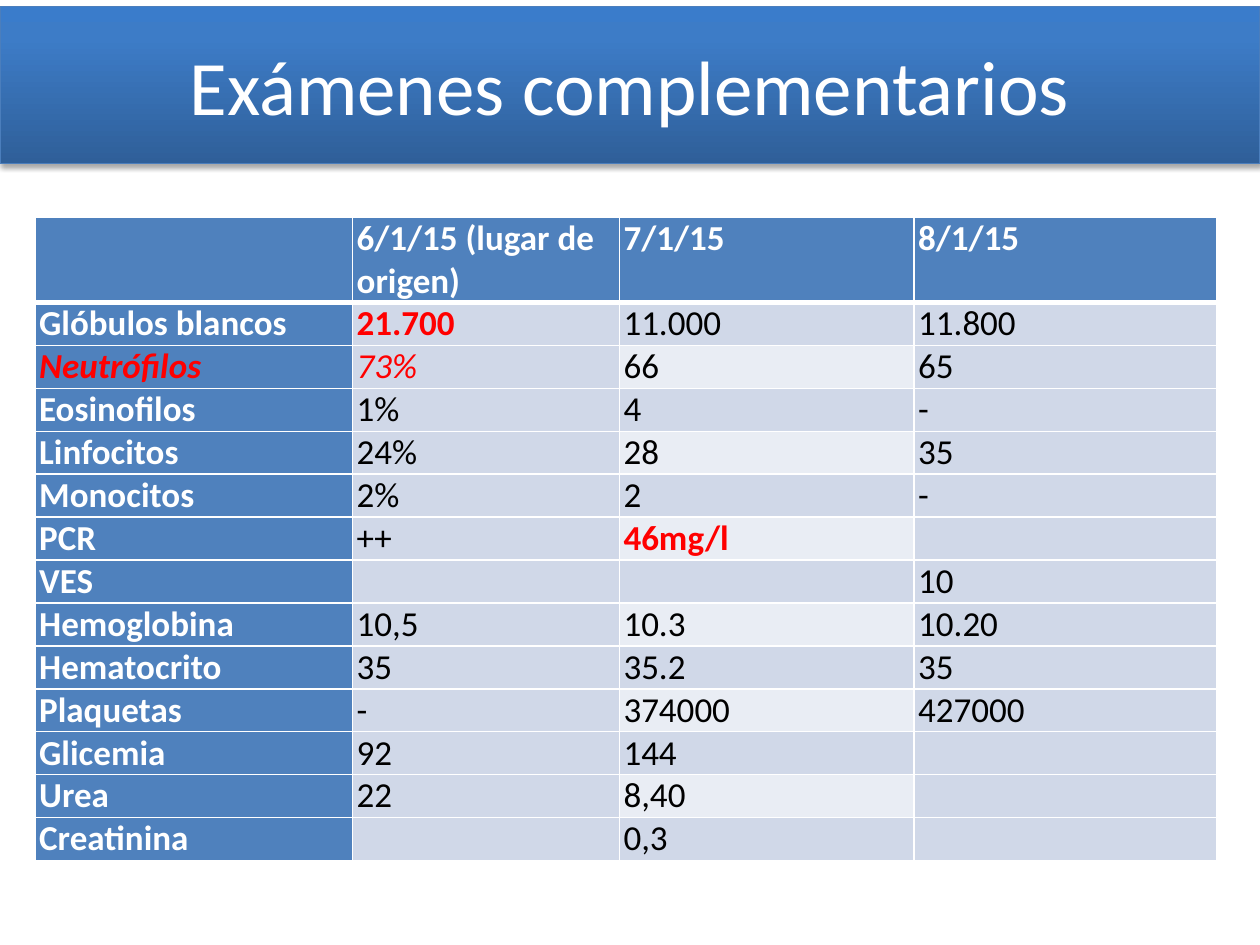
import pptx
import pptx.util
import pptx.dml.color
import pptx.enum.text
import pptx.oxml
import pptx.oxml.ns

Cm, Pt = pptx.util.Cm, pptx.util.Pt

TITLE = "Exámenes complementarios"
ROWS = [
    ("", "6/1/15 (lugar de origen)", "7/1/15", "8/1/15"),
    ("Glóbulos blancos", "21.700", "11.000", "11.800"),
    ("Neutrófilos", "73%", "66", "65"),
    ("Eosinofilos", "1%", "4", "-"),
    ("Linfocitos", "24%", "28", "35"),
    ("Monocitos", "2%", "2", "-"),
    ("PCR", "++", "46mg/l", ""),
    ("VES", "", "", "10"),
    ("Hemoglobina", "10,5", "10.3", "10.20"),
    ("Hematocrito", "35", "35.2", "35"),
    ("Plaquetas", "-", "374000", "427000"),
    ("Glicemia", "92", "144", ""),
    ("Urea", "22", "8,40", ""),
    ("Creatinina", "", "0,3", ""),
]
WIDTHS = [6.4, 5.38, 5.94, 6.1]
HEAD, ROW = 1.73, 0.86
BLUE, BAND, PALE = "4F81BD", "D0D8E8", "E9EDF4"
WHITE, BLACK, RED = "FFFFFF", "000000", "FF0000"
MARKS = {
    (1, 1): {"bold": True},
    (2, 0): {"bold": True, "italic": True},
    (2, 1): {"italic": True},
    (6, 2): {"bold": True},
}
STOPS = [(0, "2F5F99"), (80, "3D7CC7"), (100, "3A7CCB")]
NS = pptx.oxml.ns.nsdecls("a")


def paint(target, code):
    target.rgb = pptx.dml.color.RGBColor.from_string(code)


def fill(shape, code):
    shape.fill.solid()
    paint(shape.fill.fore_color, code)


def put(item, values):
    for name, value in values.items():
        setattr(item, name, value)


def add(parent, text):
    parent.append(pptx.oxml.parse_xml(text))


def write(frame, text, code, **style):
    run = frame.paragraphs[0].add_run()
    run.text = text
    put(run.font, {"name": "Calibri", **style})
    paint(run.font.color, code)


def edge(cell, side, width):
    add(cell._tc.get_or_add_tcPr(),
        f'<a:ln{side} {NS} w="{Pt(width)}"><a:solidFill>'
        f'<a:srgbClr val="{WHITE}"/></a:solidFill></a:ln{side}>')


def banner(slide):
    bar = slide.shapes.title
    put(bar, {"left": Cm(0), "top": Cm(0.13), "width": Cm(25.4), "height": Cm(3.17)})
    stops = "".join(
        f'<a:gs pos="{at * 1000}"><a:srgbClr val="{code}"/></a:gs>' for at, code in STOPS)
    props = bar._element.spPr
    add(props, f'<a:prstGeom {NS} prst="rect"><a:avLst/></a:prstGeom>')
    add(props, f'<a:gradFill {NS} rotWithShape="1"><a:gsLst>{stops}</a:gsLst>'
               '<a:lin ang="16200000" scaled="0"/></a:gradFill>')
    paint(bar.line.color, "4B7EBC")
    bar.line.width = Pt(0.75)
    add(props, f'<a:effectLst {NS}><a:outerShdw blurRad="{Pt(3.1)}" dist="{Pt(1.8)}" '
               f'dir="5400000" rotWithShape="0"><a:srgbClr val="{BLACK}">'
               '<a:alpha val="35000"/></a:srgbClr></a:outerShdw></a:effectLst>')
    frame = bar.text_frame
    frame.vertical_anchor = pptx.enum.text.MSO_ANCHOR.MIDDLE
    frame.paragraphs[0].alignment = pptx.enum.text.PP_ALIGN.CENTER
    write(frame, TITLE, WHITE, size=Pt(44))


def results(slide):
    high = HEAD + ROW * (len(ROWS) - 1)
    grid = slide.shapes.add_table(
        len(ROWS), len(WIDTHS), Cm(0.71), Cm(4.37), Cm(sum(WIDTHS)), Cm(high)).table
    for col, width in zip(grid.columns, WIDTHS):
        col.width = Cm(width)
    for r, row in enumerate(ROWS):
        grid.rows[r].height = Cm(ROW if r else HEAD)
        for c, text in enumerate(row):
            cell = grid.cell(r, c)
            label = r == 0 or c == 0
            put(cell, {"margin_left": Cm(0.08), "margin_right": Cm(0.08),
                       "margin_top": 0, "margin_bottom": 0})
            for side, width in (("L", 1), ("R", 1), ("T", 3 if r == 1 else 1),
                                ("B", 1 if r else 3)):
                edge(cell, side, width)
            pale = c == 2 and r % 2 == 0
            fill(cell, BLUE if label else PALE if pale else BAND)
            if text:
                mark = MARKS.get((r, c))
                style = mark or {"bold": label}
                code = RED if mark else WHITE if label else BLACK
                write(cell.text_frame, text, code,
                      **{"size": Pt(20), "bold": False, "italic": False, **style})


def main():
    deck = pptx.Presentation()
    put(deck, {"slide_width": Cm(25.4), "slide_height": Cm(19.05)})
    slide = deck.slides.add_slide(deck.slide_layouts[5])
    banner(slide)
    results(slide)
    deck.save("out.pptx")


if __name__ == "__main__":
    main()
